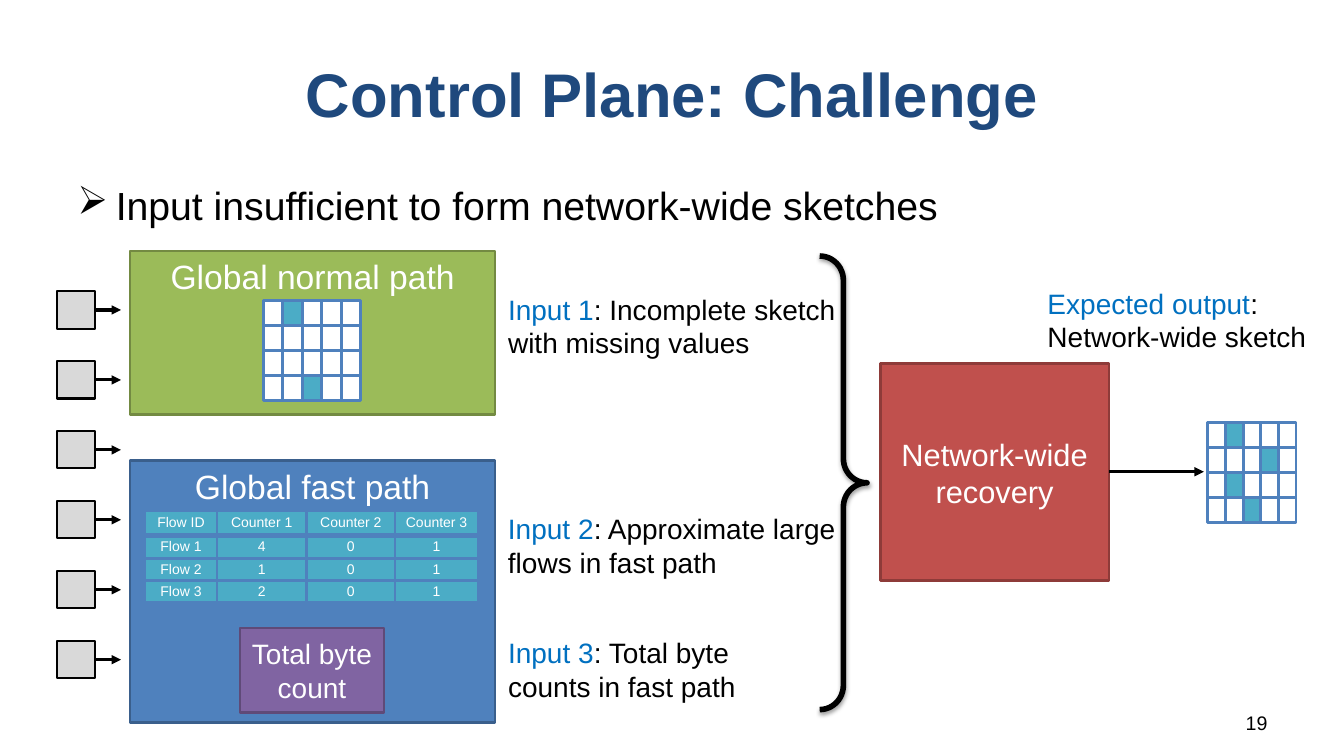
from dataclasses import dataclass

from lxml.etree import SubElement
from pptx import Presentation
from pptx.dml.color import RGBColor
from pptx.enum.shapes import MSO_CONNECTOR as Connector, MSO_SHAPE as Shape
from pptx.enum.text import MSO_ANCHOR as Anchor, PP_ALIGN as Align
from pptx.oxml import parse_xml
from pptx.oxml.ns import nsdecls, qn
from pptx.util import Inches, Pt

GRID = Inches(0.1)  # one column or row of the slide grid


@dataclass(frozen=True)
class Theme:
    font: str = "Arial"
    navy: str = "1F497D"
    black: str = "000000"
    white: str = "FFFFFF"
    accent: str = "0070C0"
    gray: str = "D9D9D9"
    blue: str = "4F81BD"
    blue_edge: str = "3A5F8C"
    teal: str = "4BACC6"
    green: str = "9BBB59"
    green_edge: str = "738A42"
    purple: str = "8064A2"
    purple_edge: str = "5F4A78"
    red: str = "C0504D"
    red_edge: str = "8E3B39"
    title: int = 44
    bullet: int = 28
    heading: int = 24
    recovery: int = 22
    body: int = 20
    number: int = 14
    table: int = 10


T = Theme()


@dataclass(frozen=True)
class Box:
    """A rectangle in grid columns and rows."""
    x: float
    y: float
    w: float
    h: float

    def inner(self, dx, dy, w, h):
        return Box(self.x + dx, self.y + dy, w, h)

    def emu(self):
        return [round(v * GRID) for v in (self.x, self.y, self.w, self.h)]


def rgb(color):
    return RGBColor.from_string(color)


def write_text(tf, text, size=T.body, color=T.black, align=Align.LEFT,
               anchor=Anchor.TOP, bold=False):
    """Text is a string, or a list of paragraphs made of (text, color) runs."""
    tf.word_wrap = True
    tf.vertical_anchor = anchor
    paragraphs = [[(text, color)]] if isinstance(text, str) else text
    for i, runs in enumerate(paragraphs):
        p = tf.add_paragraph() if i else tf.paragraphs[0]
        p.alignment = align
        for words, run_color in runs:
            r = p.add_run()
            r.text = words
            r.font.name, r.font.size, r.font.bold = T.font, Pt(size), bold
            r.font.color.rgb = rgb(run_color)


def add_text(s, box, text, **fmt):
    sp = s.shapes.add_textbox(*box.emu())
    write_text(sp.text_frame, text, **fmt)
    return sp


def add_block(s, box, fill, edge, text=None, width=2, **fmt):
    sp = s.shapes.add_shape(Shape.RECTANGLE, *box.emu())
    sp.shadow.inherit = False
    sp.fill.solid()
    sp.fill.fore_color.rgb = rgb(fill)
    sp.line.color.rgb = rgb(edge)
    sp.line.width = Pt(width)
    if text:
        write_text(sp.text_frame, text, color=T.white, align=Align.CENTER, **fmt)


def add_arrow(s, x1, x2, y):
    c = s.shapes.add_connector(
        Connector.STRAIGHT, *(round(v * GRID) for v in (x1, y, x2, y)))
    c.line.color.rgb = rgb(T.black)
    c.line.width = Pt(2.25)
    SubElement(c.line._get_or_add_ln(), qn("a:tailEnd"), type="triangle")
    SubElement(c._element.spPr, qn("a:effectLst"))


def add_title(s, box):
    sp = s.shapes.title
    sp.left, sp.top, sp.width, sp.height = box.emu()
    write_text(sp.text_frame, "Control Plane: Challenge", size=T.title,
               color=T.navy, align=Align.CENTER, anchor=Anchor.MIDDLE, bold=True)


def add_bullet(s, box, text):
    sp = add_text(s, box, text, size=T.bullet)
    pPr = sp.text_frame.paragraphs[0]._p.get_or_add_pPr()
    indent = Inches(0.38)
    pPr.set("marL", str(indent))
    pPr.set("indent", str(-indent))
    SubElement(pPr, qn("a:buChar"), char="➢")


def add_hosts(s, box, count=6):
    """Evenly spaced hosts, each with an arrow to the right edge of the box."""
    side = 3.7
    step = (box.h - side) / (count - 1)
    for i in range(count):
        host = box.inner(0, i * step, side, side)
        add_block(s, host, T.gray, T.black, width=1.5)
        add_arrow(s, box.x + side, box.x + box.w, host.y + side / 2)


def add_sketch(s, box, marked, cols=5, rows=4):
    """Grid of counters; marked holds the (row, column) of filled cells."""
    w, h = box.w / cols, box.h / rows
    for row in range(rows):
        for col in range(cols):
            fill = T.teal if (row, col) in marked else T.white
            add_block(s, box.inner(col * w, row * h, w, h), fill, T.blue)


def set_borders(cell, widths):
    """Widths in points for the left, right, top and bottom border."""
    tcPr = cell._tc.get_or_add_tcPr()
    for i, (side, width) in enumerate(zip("LRTB", widths)):
        tcPr.insert(i, parse_xml(
            f'<a:ln{side} {nsdecls("a")} w="{Pt(width)}"><a:solidFill>'
            f'<a:srgbClr val="{T.blue}"/></a:solidFill></a:ln{side}>'))


def add_flow_table(s, box):
    rows = [["Flow ID", "Counter 1", "Counter 2", "Counter 3"],
            ["Flow 1", "4", "0", "1"],
            ["Flow 2", "1", "0", "1"],
            ["Flow 3", "2", "0", "1"]]
    table = s.shapes.add_table(len(rows), len(rows[0]), *box.emu()).table
    table.first_row = table.horz_banding = False
    for column, width in zip(table.columns, (7.1, 8.9, 8.8, 8.2)):
        column.width = round(width * GRID)
    for row, height in zip(table.rows, (2.4, 2.3, 2.2, 2.2)):
        row.height = round(height * GRID)
    for i, row in enumerate(rows):
        for j, value in enumerate(row):
            cell = table.cell(i, j)
            cell.margin_left = cell.margin_right = 0
            cell.margin_top = cell.margin_bottom = 0
            cell.vertical_anchor = Anchor.MIDDLE
            cell.fill.solid()
            cell.fill.fore_color.rgb = rgb(T.teal)
            set_borders(cell, (2, 2, 4 if i == 1 else 2, 4 if i == 0 else 2))
            write_text(cell.text_frame, value, size=T.table, color=T.white,
                       align=Align.CENTER, anchor=Anchor.MIDDLE)


def add_normal_path(s, box):
    add_block(s, box, T.green, T.green_edge, "Global normal path", size=T.heading)
    add_sketch(s, box.inner(13.2, 4.9, 9.7, 9.9), {(0, 1), (3, 2)})


def add_fast_path(s, box):
    add_block(s, box, T.blue, T.blue_edge, "Global fast path", size=T.heading)
    add_flow_table(s, box.inner(1.5, 5, 33, 9.1))
    add_block(s, box.inner(10.9, 16.6, 14.3, 8.4), T.purple, T.purple_edge,
              "Total byte count", anchor=Anchor.MIDDLE)


def add_inputs(s, box):
    inputs = [
        (0, 35.1, [[("Input 1", T.accent),
                    (": Incomplete sketch with missing values", T.black)]]),
        (21.8, 37.7, [[("Input 2", T.accent), (": Approximate large", T.black)],
                      [("flows in fast path", T.black)]]),
        (34.1, 30.1, [[("Input 3", T.accent),
                       (": Total byte counts in fast path", T.black)]])]
    for dy, width, text in inputs:
        add_text(s, box.inner(0, dy, width, 7.7), text)


def add_brace(s, box):
    sp = s.shapes.add_shape(Shape.RIGHT_BRACE, *box.emu())
    sp.adjustments[0], sp.adjustments[1] = 0.51, 0.5
    sp.fill.background()
    sp.line.color.rgb = rgb(T.black)
    sp.line.width = Pt(4)
    sp._element.spPr.append(parse_xml(
        f'<a:effectLst {nsdecls("a")}><a:outerShdw blurRad="{Pt(3.1)}" '
        f'dist="{Pt(1.6)}" dir="5400000" rotWithShape="0"><a:srgbClr '
        f'val="{T.black}"><a:alpha val="38000"/></a:srgbClr></a:outerShdw>'
        '</a:effectLst>'))


def add_recovery(s, box):
    """Recovery block, its arrow and the expected sketch."""
    add_block(s, box.inner(0, 8.2, 22.7, 21.5), T.red, T.red_edge,
              "Network-wide recovery", size=T.recovery, anchor=Anchor.MIDDLE)
    add_text(s, box.inner(15.6, 0, 31.1, 7.7),
             [[("Expected output", T.accent), (":", T.black)],
              [("Network-wide sketch", T.black)]])
    add_arrow(s, box.x + 22.7, box.x + 32.1, box.y + 18.9)
    add_sketch(s, box.inner(32.5, 14, 8.75, 9.9),
               {(0, 1), (1, 3), (2, 1), (3, 2)})


def main():
    prs = Presentation()
    prs.slide_width, prs.slide_height = Inches(13.33), Inches(7.5)
    s = prs.slides.add_slide(prs.slide_layouts[5])
    add_title(s, Box(6.7, 3, 120, 12.5))
    add_bullet(s, Box(6.7, 17.5, 120, 11),
               "Input insufficient to form network-wide sketches")
    add_hosts(s, Box(5.7, 28.9, 6.3, 38.4))
    add_normal_path(s, Box(12.9, 24.9, 36.2, 16.2))
    add_fast_path(s, Box(12.9, 45.7, 36.2, 26))
    add_inputs(s, Box(49.4, 28.5, 37.7, 41.8))
    add_brace(s, Box(81.3, 25.4, 4.7, 45))
    add_recovery(s, Box(87.3, 27.9, 46, 29.7))
    add_text(s, Box(95.6, 70, 31.1, 3.5), "19", size=T.number,
             align=Align.RIGHT, anchor=Anchor.TOP)
    prs.save("out.pptx")


if __name__ == "__main__":
    main()
